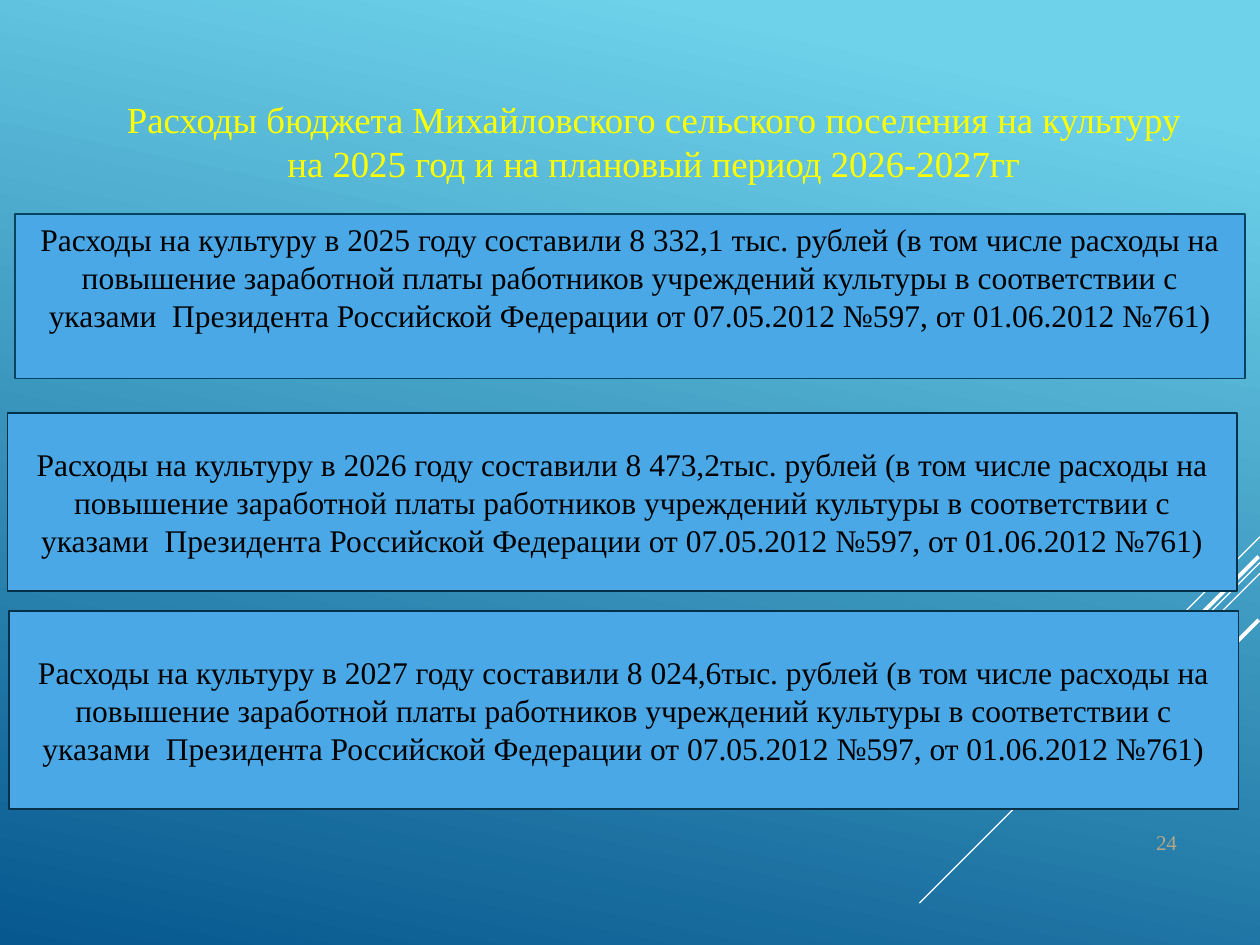
from pptx import Presentation
from pptx.dml.color import RGBColor
from pptx.enum.shapes import MSO_CONNECTOR, MSO_SHAPE
from pptx.enum.text import MSO_ANCHOR, MSO_AUTO_SIZE, PP_ALIGN
from pptx.oxml.ns import qn
from pptx.util import Pt
from lxml.etree import SubElement

SKY = RGBColor(0x6E, 0xD2, 0xEB)
DEEP_BLUE = RGBColor(0x06, 0x58, 0x8E)
PANEL_BLUE = RGBColor(0x4A, 0xA8, 0xE7)
TEAL_BORDER = RGBColor(0x05, 0x43, 0x61)
NAVY_BORDER = RGBColor(0x04, 0x31, 0x48)
WHITE = RGBColor(0xFF, 0xFF, 0xFF)
BLACK = RGBColor(0, 0, 0)
YELLOW = RGBColor(0xFF, 0xFF, 0)
SAND = RGBColor(0xB5, 0xA7, 0x88)

TITLE = ("Расходы бюджета Михайловского сельского поселения на культуру "
         "на 2025 год и на плановый период 2026-2027гг")
EXPENSE = ("Расходы на культуру в {} году составили {}тыс. рублей (в том числе "
           "расходы на повышение заработной платы работников учреждений культуры "
           "в соответствии с указами  Президента Российской Федерации "
           "от 07.05.2012 №597, от 01.06.2012 №761)")

STRIPES = [
    (720, 306.72, 59.76, 0.75),
    (720, 321.48, 194.6, 0.75),
    (720, 327.6, 123.84, 0.75),
    (719.28, 318, 113.6, 2.25),
    (719.28, 354.24, 82.08, 2.25),
]
EXPENSES = [
    (2025, "8 332,1 ", 8.64, 122.4, 93.96, TEAL_BORDER, MSO_ANCHOR.TOP),
    (2026, "8 473,2", 4.32, 236.16, 101.52, NAVY_BORDER, MSO_ANCHOR.MIDDLE),
    (2027, "8 024,6", 5.04, 349.2, 113.04, NAVY_BORDER, MSO_ANCHOR.MIDDLE),
]
PANEL_WIDTH = 702.72


class SlideBuilder:
    font = "Times New Roman"

    def __init__(self, slide):
        self.slide = slide

    def background(self, start, end, angle):
        fill = self.slide.background.fill
        fill.gradient()
        fill.gradient_angle = angle
        for stop, color, position in zip(fill.gradient_stops, (start, end), (0.1, 1)):
            stop.color.rgb = color
            stop.position = position

    def set_text(self, shape, text, size, color, align, anchor):
        frame = shape.text_frame
        frame.text = text
        frame.word_wrap = True
        frame.auto_size = MSO_AUTO_SIZE.NONE
        frame.vertical_anchor = anchor
        para = frame.paragraphs[0]
        para.alignment = align
        for span in para.runs:
            span.font.name = self.font
            span.font.size = Pt(size)
            span.font.color.rgb = color

    def title(self, text, left, top, width, height):
        box = self.slide.shapes.title
        box.left, box.top, box.width, box.height = map(Pt, (left, top, width, height))
        self.set_text(box, text, 21, YELLOW, PP_ALIGN.CENTER, MSO_ANCHOR.TOP)

    def stripe(self, right, top, run, weight):
        line = self.slide.shapes.add_connector(
            MSO_CONNECTOR.STRAIGHT, Pt(right), Pt(top), Pt(right - run), Pt(top + run))
        line.line.color.rgb = WHITE
        line.line.width = Pt(weight)
        SubElement(line._element.spPr, qn("a:effectLst"))

    def panel(self, text, left, top, width, height, border, anchor):
        box = self.slide.shapes.add_shape(
            MSO_SHAPE.RECTANGLE, Pt(left), Pt(top), Pt(width), Pt(height))
        box.shadow.inherit = False
        box.fill.solid()
        box.fill.fore_color.rgb = PANEL_BLUE
        box.line.color.rgb = border
        box.line.width = Pt(1)
        self.set_text(box, text, 18, BLACK, PP_ALIGN.CENTER, anchor)

    def page_number(self, text, left, top, width, height):
        box = self.slide.shapes.add_textbox(Pt(left), Pt(top), Pt(width), Pt(height))
        self.set_text(box, text, 12, SAND, PP_ALIGN.RIGHT, MSO_ANCHOR.BOTTOM)


def main():
    deck = Presentation()
    deck.slide_width, deck.slide_height = Pt(720), Pt(540)
    page = SlideBuilder(deck.slides.add_slide(deck.slide_layouts[5]))
    page.background(SKY, DEEP_BLUE, 258)
    for stripe in STRIPES:
        page.stripe(*stripe)
    page.page_number("24", 612, 439.2, 67.68, 52.56)
    page.title(TITLE, 64.8, 51.84, 617.76, 58.32)
    for year, amount, left, top, height, border, anchor in EXPENSES:
        page.panel(EXPENSE.format(year, amount), left, top, PANEL_WIDTH, height,
                   border, anchor)
    deck.save("out.pptx")


if __name__ == "__main__":
    main()
